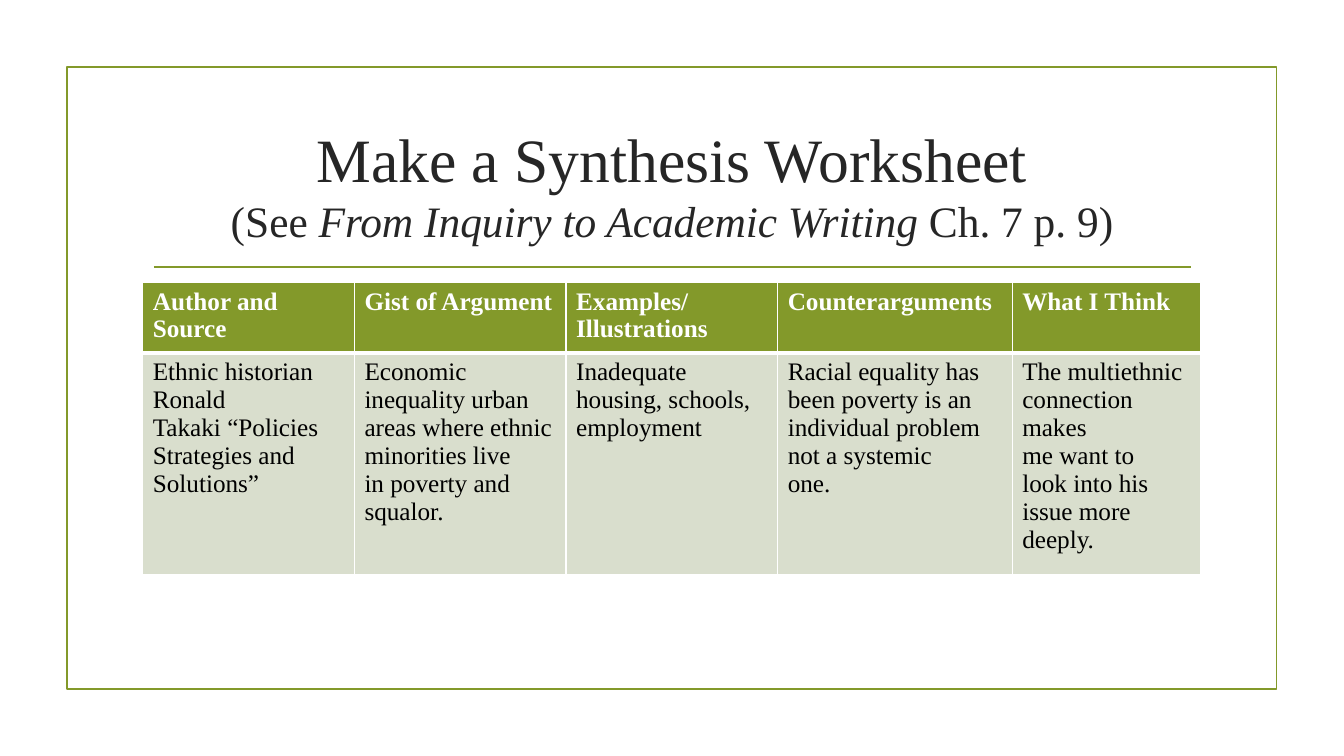
import pptx
import pptx.util
import pptx.dml.color
import pptx.enum.shapes
import pptx.enum.text
import pptx.oxml
import pptx.oxml.ns
from lxml import etree

Pt = pptx.util.Pt
RGBColor = pptx.dml.color.RGBColor

TITLE_RUNS = [
    ("Make a Synthesis Worksheet", 44, False),
    ("(See ", 31, False),
    ("From Inquiry to Academic Writing ", 31, True),
    ("Ch. 7 p. 9)", 31, False),
]
COLUMNS = [
    ("Author and Source", 151.2,
     ["Ethnic historian Ronald", "Takaki “Policies Strategies and", "Solutions”"]),
    ("Gist of Argument", 151.2,
     ["Economic", "inequality urban areas where ethnic", "minorities live",
      "in poverty and", "squalor."]),
    ("Examples/ Illustrations", 151.2,
     ["Inadequate", "housing, schools,", "employment"]),
    ("Counterarguments", 167.5,
     ["Racial equality has been poverty is an",
      "individual problem not a systemic", "one."]),
    ("What I Think", 134.9,
     ["The multiethnic connection makes", "me want to", "look into his",
      "issue more deeply."]),
]
ROW_HEIGHTS = [47, 147]
FONT = "Times New Roman"
GREEN = RGBColor(0x83, 0x99, 0x2A)
PALE = RGBColor(0xD9, 0xDE, 0xCD)
DARK = RGBColor(0x26, 0x26, 0x26)
WHITE = RGBColor(0xFF, 0xFF, 0xFF)
BLACK = RGBColor(0, 0, 0)
LEFT, WIDTH = 102, 756


def style_font(font, size, color, bold=False, italic=False):
    font.name = FONT
    font.size = Pt(size)
    font.color.rgb = color
    font.bold = bold
    font.italic = italic


def set_borders(cell, bottom_width):
    properties = cell._tc.get_or_add_tcPr()
    widths = {"lnL": 1, "lnR": 1, "lnT": 1, "lnB": bottom_width}
    for position, (side, width) in enumerate(widths.items()):
        border = etree.Element(pptx.oxml.ns.qn(f"a:{side}"), w=str(Pt(width)))
        fill = etree.SubElement(border, pptx.oxml.ns.qn("a:solidFill"))
        etree.SubElement(fill, pptx.oxml.ns.qn("a:srgbClr"), val=str(WHITE))
        properties.insert(position, border)


def fill_cell(cell, lines, fill, color, bold, bottom_width):
    cell.fill.solid()
    cell.fill.fore_color.rgb = fill
    cell.text_frame.text = "\n".join(lines)
    for paragraph in cell.text_frame.paragraphs:
        style_font(paragraph.runs[0].font, 18, color, bold)
    set_borders(cell, bottom_width)


def add_frame(slide):
    frame = slide.shapes.add_shape(
        pptx.enum.shapes.MSO_SHAPE.RECTANGLE, Pt(47.8), Pt(48), Pt(864), Pt(444))
    frame.shadow.inherit = False
    frame.fill.background()
    frame.line.color.rgb = GREEN
    frame.line.width = Pt(1.25)

    rule = slide.shapes.add_connector(
        pptx.enum.shapes.MSO_CONNECTOR.STRAIGHT, Pt(110), Pt(190.6), Pt(850.5), Pt(190.6))
    rule.line.color.rgb = GREEN
    rule.line.width = Pt(1.25)
    etree.SubElement(rule._element.spPr, pptx.oxml.ns.qn("a:effectLst"))


def add_title(slide):
    text_frame = slide.shapes.add_textbox(Pt(LEFT), Pt(77), Pt(WIDTH), Pt(103)).text_frame
    text_frame.word_wrap = True
    text_frame.margin_top = Pt(9)
    text_frame.vertical_anchor = pptx.enum.text.MSO_ANCHOR.MIDDLE
    paragraph = text_frame.paragraphs[0]
    paragraph.alignment = pptx.enum.text.PP_ALIGN.CENTER
    for index, (text, size, italic) in enumerate(TITLE_RUNS):
        if index == 1:
            paragraph.add_line_break()
        run = paragraph.add_run()
        run.text = text
        style_font(run.font, size, DARK, italic=italic)


def add_worksheet(slide):
    table = slide.shapes.add_table(
        len(ROW_HEIGHTS), len(COLUMNS), Pt(LEFT), Pt(201.8),
        Pt(WIDTH), Pt(sum(ROW_HEIGHTS))).table
    for row, height in zip(table.rows, ROW_HEIGHTS):
        row.height = Pt(height)
    for index, (heading, width, lines) in enumerate(COLUMNS):
        table.columns[index].width = Pt(width)
        fill_cell(table.cell(0, index), [heading], GREEN, WHITE, True, 3)
        fill_cell(table.cell(1, index), lines, PALE, BLACK, False, 1)


def main():
    presentation = pptx.Presentation()
    presentation.slide_width = Pt(960)
    presentation.slide_height = Pt(540)
    slide = presentation.slides.add_slide(presentation.slide_layouts[6])
    add_frame(slide)
    add_title(slide)
    add_worksheet(slide)
    presentation.save("out.pptx")


if __name__ == "__main__":
    main()
